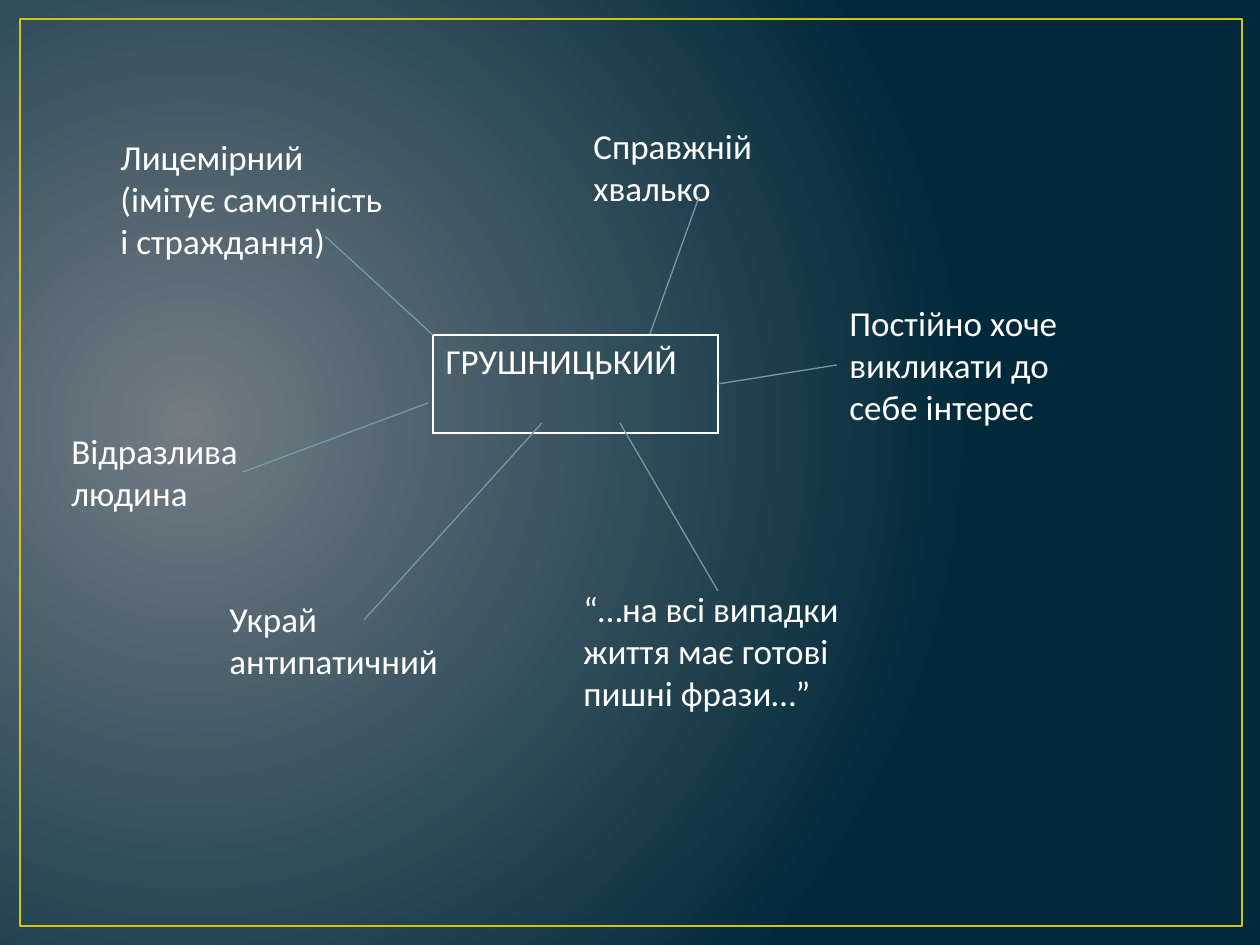
from dataclasses import dataclass

from lxml.etree import SubElement
from pptx import Presentation
from pptx.dml.color import RGBColor
from pptx.enum.shapes import MSO_CONNECTOR, MSO_SHAPE
from pptx.enum.text import MSO_AUTO_SIZE
from pptx.oxml.ns import qn
from pptx.util import Emu, Pt

PIXEL = 914400 // 126
LEFT_SIDE = 1


@dataclass(frozen=True)
class Theme:
    glow: str = "717C84"
    night: str = "01293A"
    frame: str = "CFC60D"
    text: str = "FFFFFF"
    link: str = "759AA5"
    font: str = "Calibri"
    text_size: int = 20
    frame_width: float = 1.5
    border_width: float = 1
    link_width: float = 0.75


class MindMap:
    """Draws the parts of a mind map on the current slide in one theme."""

    def __init__(self, page, theme):
        self.page = page
        self.theme = theme

    def scale(self, *lengths):
        return [Emu(length * PIXEL) for length in lengths]

    def background(self):
        fill = self.page.background.fill
        fill.gradient()
        for stop, color in zip(fill.gradient_stops, (self.theme.glow, self.theme.night)):
            stop.color.rgb = RGBColor.from_string(color)
        gradient = self.page.element.find(".//" + qn("a:gradFill"))
        gradient.remove(gradient.find(qn("a:lin")))
        circle = SubElement(gradient, qn("a:path"), path="circle")
        SubElement(circle, qn("a:fillToRect"), l="15000", t="50000", r="85000", b="60000")

    def frame(self, *bounds):
        box = self.page.shapes.add_shape(MSO_SHAPE.RECTANGLE, *self.scale(*bounds))
        box.shadow.inherit = False
        box.fill.background()
        box.line.color.rgb = RGBColor.from_string(self.theme.frame)
        box.line.width = Pt(self.theme.frame_width)

    def label(self, text_frame, text):
        span = text_frame.paragraphs[0].add_run()
        span.text = text
        span.font.name = self.theme.font
        span.font.size = Pt(self.theme.text_size)
        span.font.bold = False
        span.font.color.rgb = RGBColor.from_string(self.theme.text)

    def topic(self, text, *bounds):
        table = self.page.shapes.add_table(1, 1, *self.scale(*bounds)).table
        cell = table.cell(0, 0)
        properties = cell._tc.get_or_add_tcPr()
        for side in ("a:lnL", "a:lnR", "a:lnT", "a:lnB"):
            border = SubElement(properties, qn(side), w=str(Pt(self.theme.border_width)))
            solid = SubElement(border, qn("a:solidFill"))
            SubElement(solid, qn("a:srgbClr"), val=self.theme.text)
        cell.fill.background()
        self.label(cell.text_frame, text)

    def trait(self, text, *bounds):
        box = self.page.shapes.add_textbox(*self.scale(*bounds))
        box.text_frame.word_wrap = True
        box.text_frame.auto_size = MSO_AUTO_SIZE.SHAPE_TO_FIT_TEXT
        self.label(box.text_frame, text)
        return box

    def link(self, *ends):
        line = self.page.shapes.add_connector(MSO_CONNECTOR.STRAIGHT, *self.scale(*ends))
        line.line.color.rgb = RGBColor.from_string(self.theme.link)
        line.line.width = Pt(self.theme.link_width)
        SubElement(line._element.spPr, qn("a:effectLst"))
        return line


def main():
    deck = Presentation()
    deck.slide_width, deck.slide_height = Emu(1260 * PIXEL), Emu(945 * PIXEL)
    page = deck.slides.add_slide(deck.slide_layouts[6])
    mind_map = MindMap(page, Theme())
    mind_map.background()
    mind_map.frame(20, 19, 1222, 907)
    mind_map.topic("ГРУШНИЦЬКИЙ", 433, 335, 285, 98)

    traits = (
        ("Справжній хвалько", (581, 118, 305, 97), (699, 197, 650, 334)),
        ("Украй антипатичний", (217, 591, 246, 97), (364, 620, 542, 423)),
        ("Відразлива людина", (59, 423, 305, 97), (243, 472, 428, 403)),
        ("“…на всі випадки життя має готові пишні фрази…”",
         (571, 581, 335, 140), (718, 591, 620, 423)),
        ("Лицемірний (імітує самотність і страждання)",
         (108, 129, 295, 140), (325, 236, 433, 335)),
        ("Постійно хоче викликати до себе інтерес",
         (837, 295, 256, 140), (837, 365, 718, 384)),
    )
    boxes = [mind_map.trait(text, *bounds) for text, bounds, _ in traits]
    lines = [mind_map.link(*ends) for _, _, ends in traits]
    lines[-1].begin_connect(boxes[-1], LEFT_SIDE)
    deck.save("out.pptx")


if __name__ == "__main__":
    main()
